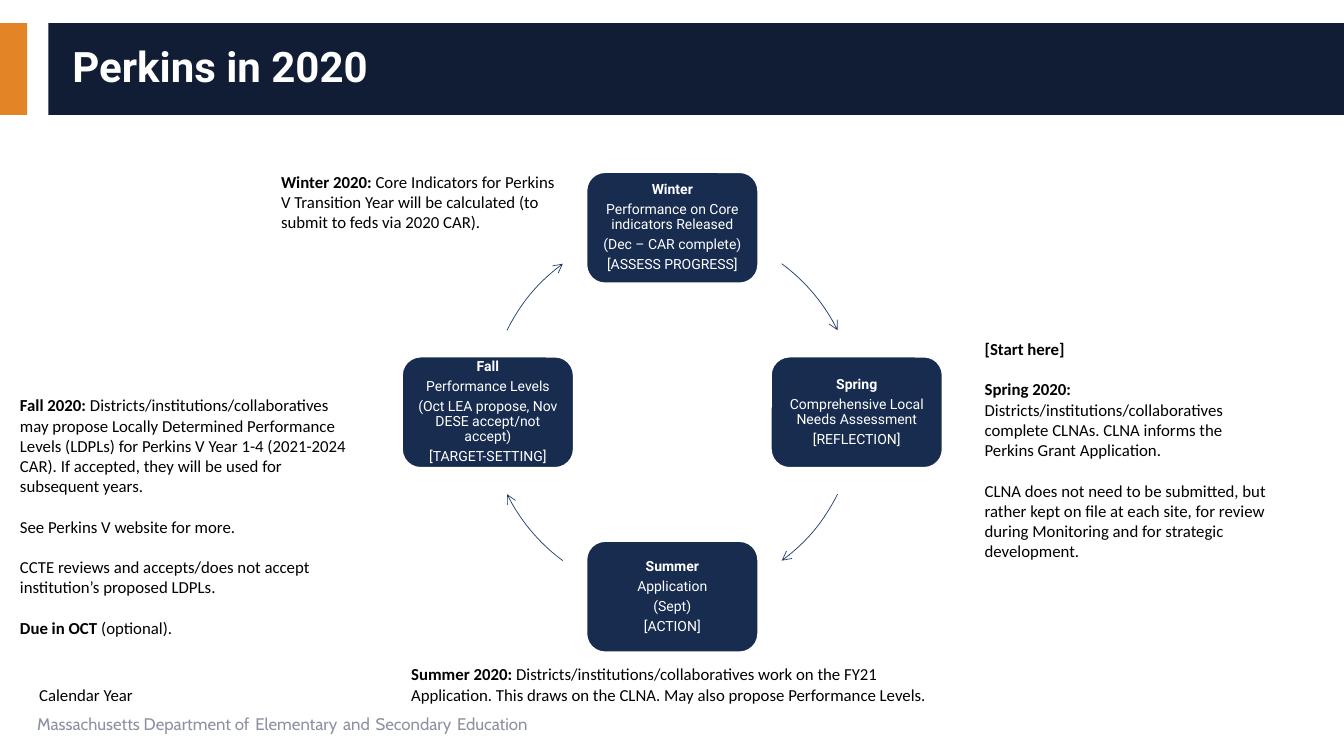
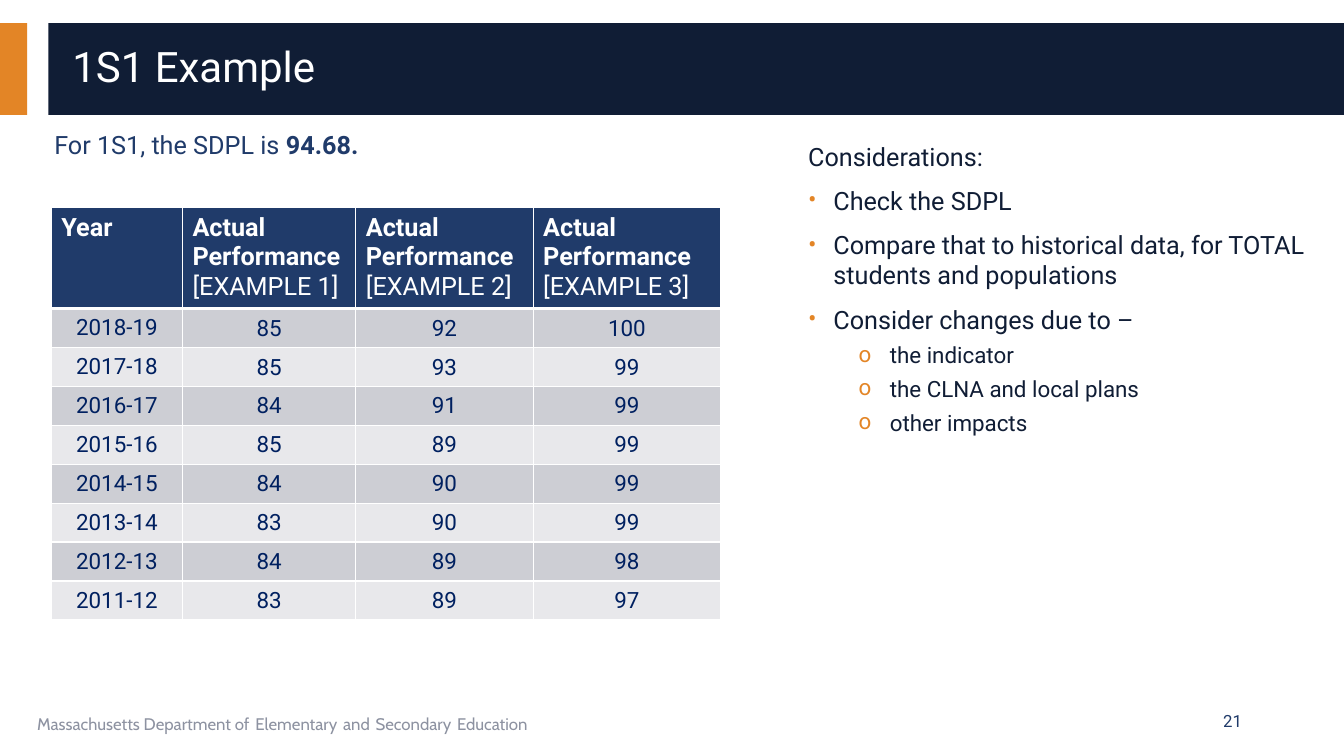
from dataclasses import dataclass
from math import cos, radians, sin

from lxml import etree
from pptx import Presentation
from pptx.dml.color import RGBColor as RGB
from pptx.enum.shapes import MSO_SHAPE as SHAPE
from pptx.enum.text import MSO_ANCHOR as ANCHOR, PP_ALIGN as ALIGN
from pptx.oxml.ns import qn
from pptx.util import Inches, Pt


@dataclass(frozen=True)
class Theme:
    # Colours
    orange: str = "E38526"
    band: str = "101D35"
    box: str = "182C50"
    navy: str = "203B6A"
    figure: str = "002060"
    grey: str = "8D92A1"
    white: str = "FFFFFF"
    black: str = "000000"
    stripes: tuple = ("CDCED4", "E8E8EB")
    # Fonts and type sizes
    main: str = "Roboto"
    note: str = "Calibri"
    foot: str = "Cabin"
    title_size: int = 30
    lead_size: int = 18
    body_size: int = 16
    note_size: int = 12
    box_size: int = 10


T = Theme()


# Text
def add_run(p, text, size, color, font=T.main, bold=False):
    r = p.add_run()
    r.text = text
    r.font.size, r.font.name, r.font.bold = Pt(size), font, bold
    r.font.color.rgb = RGB.from_string(color)


def add_bullet(p, char, indent, hang):
    pPr = p._p.get_or_add_pPr()
    pPr.set("marL", str(Inches(indent)))
    pPr.set("indent", str(-Inches(hang)))
    color = etree.SubElement(pPr, qn("a:buClr"))
    etree.SubElement(color, qn("a:srgbClr"), val=T.orange)
    etree.SubElement(pPr, qn("a:buFont"), typeface=T.main)
    etree.SubElement(pPr, qn("a:buChar"), char=char)


def add_text(tf, text, size=T.lead_size, color=T.navy, font=T.main, align=ALIGN.LEFT,
             before=0, after=0, spacing=None, bullet=None):
    """Append a paragraph; parts between ** marks are bold."""
    first = tf.paragraphs[0]
    is_first = not first.runs
    p = first if is_first else tf.add_paragraph()
    p.alignment = align
    if before and not is_first:
        p.space_before = Pt(before)
    if after:
        p.space_after = Pt(after)
    if spacing:
        p.line_spacing = spacing
    if bullet:
        add_bullet(p, *bullet)
    for i, part in enumerate(text.split("**")):
        if part:
            add_run(p, part, size, color, font, bold=i % 2 == 1)


def set_margins(item, left, top, right, bottom):
    item.margin_left, item.margin_top = Inches(left), Inches(top)
    item.margin_right, item.margin_bottom = Inches(right), Inches(bottom)


def text_box(s, x, y, w, h, anchor=ANCHOR.TOP):
    tf = s.shapes.add_textbox(Inches(x), Inches(y), Inches(w), Inches(h)).text_frame
    tf.word_wrap = True
    tf.vertical_anchor = anchor
    return tf


def note(s, x, y, w, h, *paragraphs):
    tf = text_box(s, x, y, w, h)
    for text in paragraphs:
        add_text(tf, text, T.note_size, T.black, T.note, before=14.6)


# Shapes
def block(s, kind, x, y, w, h, fill, line=None):
    sp = s.shapes.add_shape(kind, Inches(x), Inches(y), Inches(w), Inches(h))
    sp.shadow.inherit = False
    sp.fill.solid()
    sp.fill.fore_color.rgb = RGB.from_string(fill)
    if line:
        sp.line.color.rgb = RGB.from_string(line)
        sp.line.width = Pt(1)
    else:
        sp.line.fill.background()
    return sp


def arc_arrow(s, cx, cy, radius, start, end):
    sp = s.shapes.add_shape(SHAPE.ARC, Inches(cx - radius), Inches(cy - radius),
                            Inches(2 * radius), Inches(2 * radius))
    # One adjustment unit is 100000 / 60000 degrees
    for i, angle in enumerate((start, end)):
        sp.adjustments[i] = angle % 360 * 0.6
    sp.shadow.inherit = False
    sp.fill.background()
    sp.line.color.rgb = RGB.from_string(T.navy)
    sp.line.width = Pt(0.5)
    etree.SubElement(sp.line._get_or_add_ln(), qn("a:tailEnd"), type="arrow")


def cycle(s, stages, cx, cy, radius, w=1.7, h=1.1):
    """Place the stages clockwise from the top, with an arrow after each."""
    step = 360 / len(stages)
    for i, lines in enumerate(stages):
        angle = -90 + i * step
        x = cx + radius * cos(radians(angle)) - w / 2
        y = cy + radius * sin(radians(angle)) - h / 2
        sp = block(s, SHAPE.ROUNDED_RECTANGLE, x, y, w, h, T.box, T.white)
        tf = sp.text_frame
        tf.word_wrap = True
        tf.vertical_anchor = ANCHOR.MIDDLE
        set_margins(tf, 0.09, 0.09, 0.09, 0.09)
        for text in lines:
            add_text(tf, text, T.box_size, T.white, align=ALIGN.CENTER,
                     spacing=0.9, after=3.5)
        # The boxes are wide, so arrows sit nearer the side boxes
        middle = angle + step / 2 + (-5 if i % 2 else 5)
        arc_arrow(s, cx, cy, radius, middle - 13.6, middle + 13.6)


# Table
def set_borders(cell, bottom=1):
    tcPr = cell._tc.get_or_add_tcPr()
    for i, (side, width) in enumerate((("L", 1), ("R", 1), ("T", 1), ("B", bottom))):
        ln = etree.Element(qn(f"a:ln{side}"), w=str(Pt(width)))
        fill = etree.SubElement(ln, qn("a:solidFill"))
        etree.SubElement(fill, qn("a:srgbClr"), val=T.white)
        tcPr.insert(i, ln)


def style_cell(cell, fill, bottom=1):
    set_borders(cell, bottom)
    cell.fill.solid()
    cell.fill.fore_color.rgb = RGB.from_string(fill)


def data_table(s, x, y, widths, head_height, body_height, header, rows):
    table = s.shapes.add_table(len(rows) + 1, len(widths), Inches(x), Inches(y),
                               Inches(sum(widths)),
                               Inches(head_height + body_height)).table
    table.first_row = table.horz_banding = False
    for column, width in zip(table.columns, widths):
        column.width = Inches(width)
    for i, row in enumerate(table.rows):
        row.height = Inches(body_height / len(rows) if i else head_height)

    for c, lines in enumerate(header):
        cell = table.cell(0, c)
        style_cell(cell, T.navy, bottom=3)
        for text in lines:
            add_text(cell.text_frame, text, color=T.white)

    for r, values in enumerate(rows):
        for c, value in enumerate(values):
            cell = table.cell(r + 1, c)
            style_cell(cell, T.stripes[r % 2])
            cell.vertical_anchor = ANCHOR.MIDDLE
            if c:
                set_margins(cell, 0.01, 0.01, 0.01, 0)
            add_text(cell.text_frame, str(value), T.body_size, T.figure, align=ALIGN.CENTER)


# Frame shared by all slides
def footer(s):
    p = text_box(s, 0.27, 6.95, 8.44, 0.4).paragraphs[0]
    parts = ("Massachusetts Department of", "Elementary", "and", "Secondary", "Education")
    for i, part in enumerate(parts):
        if i:
            add_run(p, " ", T.lead_size, T.navy, T.foot)
        add_run(p, part, T.note_size, T.grey, T.foot)


def new_slide(prs, title):
    s = prs.slides.add_slide(prs.slide_layouts[6])
    block(s, SHAPE.RECTANGLE, 0, 0.23, 0.27, 0.91, T.orange)
    block(s, SHAPE.RECTANGLE, 0.48, 0.23, 12.86, 0.91, T.band)
    add_text(text_box(s, 0.62, 0.31, 12.44, 0.74, ANCHOR.MIDDLE), title,
             T.title_size, T.white, spacing=0.9)
    footer(s)
    return s


# Slides
def perkins_slide(prs):
    s = new_slide(prs, "**Perkins in 2020**")
    cycle(s, (
        ("**Winter**", "Performance on Core indicators Released",
         "(Dec – CAR complete)", "[ASSESS PROGRESS]"),
        ("**Spring**", "Comprehensive Local Needs Assessment", "[REFLECTION]"),
        ("**Summer**", "Application", "(Sept)", "[ACTION]"),
        ("**Fall**", "Performance Levels",
         "(Oct LEA propose, Nov DESE accept/not accept)", "[TARGET-SETTING]"),
    ), cx=6.67, cy=4.09, radius=1.83)

    note(s, 9.67, 3.31, 3, 2.32, "**[Start here]**",
         "**Spring 2020: **Districts/institutions/collaboratives complete CLNAs. "
         "CLNA informs the Perkins Grant Application.",
         "CLNA does not need to be submitted, but rather kept on file at each site, "
         "for review during Monitoring and for strategic development.")
    note(s, 3.98, 6.54, 5.55, 0.5,
         "**Summer 2020: **Districts/institutions/collaboratives work on the FY21 "
         "Application. This draws on the CLNA. May also propose Performance Levels.")
    note(s, 0.1, 3.87, 3.57, 2.52,
         "**Fall 2020:** Districts/institutions/collaboratives may propose Locally "
         "Determined Performance Levels (LDPLs) for Perkins V Year 1-4 (2021-2024 CAR). "
         "If accepted, they will be used for subsequent years.",
         "See Perkins V website for more.",
         "CCTE reviews and accepts/does not accept institution’s proposed LDPLs.",
         "**Due in OCT **(optional).")
    note(s, 2.69, 1.65, 3.04, 0.71,
         "**Winter 2020: **Core Indicators for Perkins V Transition Year will be "
         "calculated (to submit to feds via 2020 CAR).")
    note(s, 0.29, 6.74, 1.38, 0.3, "Calendar Year")


def example_slide(prs):
    s = new_slide(prs, "1S1 Example")
    add_text(text_box(s, 0.44, 1.23, 3.48, 0.4), "For 1S1, the SDPL is **94.68.**")

    header = [("**Year**",)]
    header += [("**Actual Performance**", f"[EXAMPLE {n}]") for n in (1, 2, 3)]
    data_table(s, 0.51, 2.06, (1.3, 1.72, 1.76, 1.86), 0.96, 3.09, header, (
        ("2018-19", 85, 92, 100),
        ("2017-18", 85, 93, 99),
        ("2016-17", 84, 91, 99),
        ("2015-16", 85, 89, 99),
        ("2014-15", 84, 90, 99),
        ("2013-14", 83, 90, 99),
        ("2012-13", 84, 89, 98),
        ("2011-12", 83, 89, 97),
    ))

    # Considerations
    tf = text_box(s, 7.92, 1.35, 5.14, 5.17)
    add_text(tf, "Considerations:", color=T.band)
    for text in ("Check the SDPL",
                 "Compare that to historical data, for TOTAL students and populations",
                 "Consider changes due to –"):
        add_text(tf, text, color=T.band, before=10, bullet=("•", 0.25, 0.25))
    for text in ("the indicator", "the CLNA and local plans", "other impacts"):
        add_text(tf, text, T.body_size, T.band, before=5, bullet=("o", 0.81, 0.31))

    add_text(text_box(s, 9.42, 6.95, 3, 0.4, ANCHOR.MIDDLE), "21",
             T.note_size, align=ALIGN.RIGHT)


def main():
    prs = Presentation()
    prs.slide_width, prs.slide_height = Inches(40 / 3), Inches(7.5)
    perkins_slide(prs)
    example_slide(prs)
    prs.save("out.pptx")


if __name__ == "__main__":
    main()
